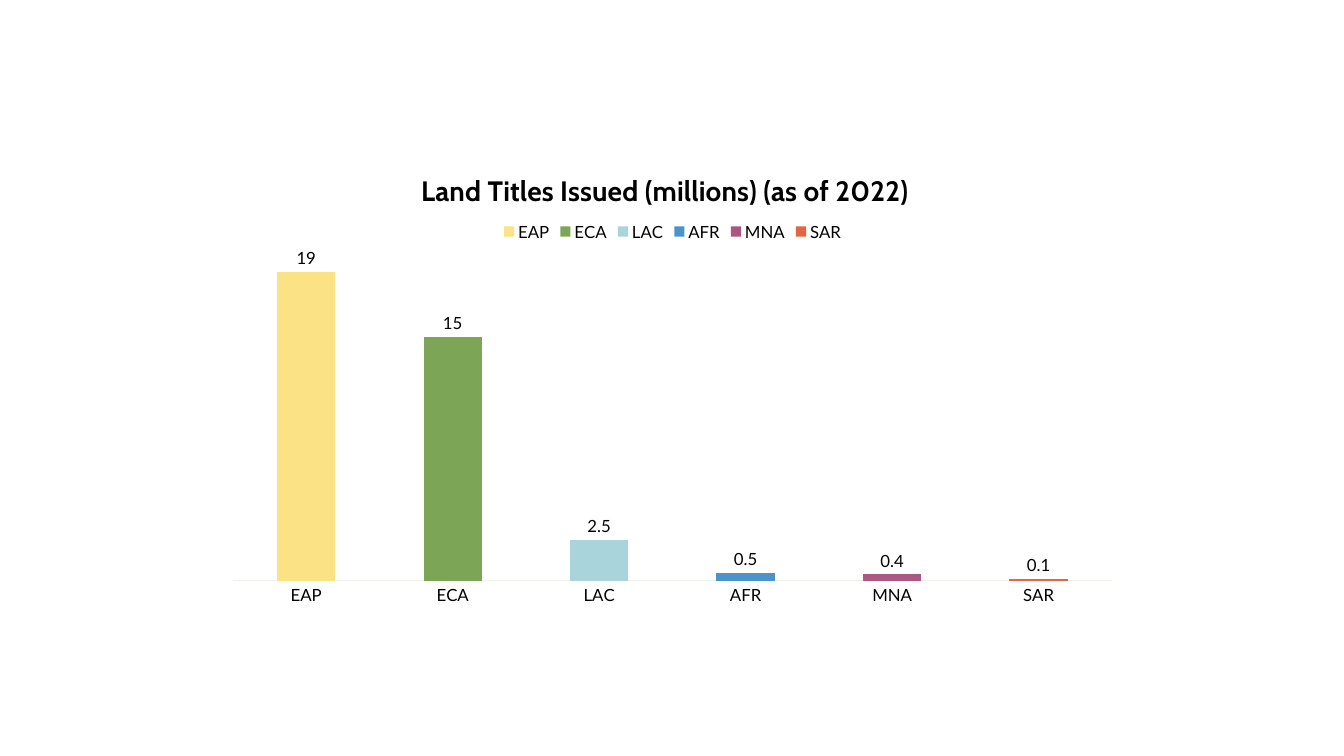
from lxml import etree
from pptx import Presentation
from pptx.chart.data import CategoryChartData as Data
from pptx.dml.color import RGBColor as RGB
from pptx.enum.chart import (XL_CHART_TYPE as Kind, XL_LABEL_POSITION as Spot,
                             XL_LEGEND_POSITION as Side, XL_TICK_MARK as Tick)
from pptx.oxml.ns import qn
from pptx.util import Inches, Pt


def style(font, size, name="Lato", bold=False):
    font.size, font.name, font.bold = Pt(size), name, bold
    font.color.rgb = RGB.from_string("000000")


def place(part, index, **sizes):
    """Give a chart part a manual layout, in fractions of the chart."""
    for old in part.findall(qn("c:layout")):
        part.remove(old)
    layout = etree.Element(qn("c:layout"))
    part.insert(index, layout)
    manual = etree.SubElement(layout, qn("c:manualLayout"))
    if "target" in sizes:
        etree.SubElement(manual, qn("c:layoutTarget"), val=sizes.pop("target"))
    for mode in ("xMode", "yMode"):
        etree.SubElement(manual, qn("c:" + mode), val="edge")
    for key, size in sizes.items():
        etree.SubElement(manual, qn("c:" + key), val=str(size))


regions = [("EAP", 19, "FBE284"), ("ECA", 15, "7CA655"), ("LAC", 2.5, "A9D4DB"),
           ("AFR", 0.5, "4B94CB"), ("MNA", 0.4, "AA5881"), ("SAR", 0.1, "E06742")]
names, values, colors = zip(*regions)

prs = Presentation()
prs.slide_width, prs.slide_height = Inches(13.33), Inches(7.5)
slide = prs.slides.add_slide(prs.slide_layouts[6])

data = Data()
data.categories = names
data.add_series("Land Titles Issued (millions)", values)
chart = slide.shapes.add_chart(Kind.COLUMN_CLUSTERED, Inches(2.13), Inches(1.41),
                               Inches(9.08), Inches(4.68), data).chart
style(chart.font, 10)

# Title and legend
chart.has_title = True
title = chart.chart_title
run = title.text_frame.paragraphs[0].add_run()
run.text = "Land Titles Issued (millions) (as of 2022)"
style(run.font, 20, "Cabin", True)
title.include_in_layout = False
place(title._element, 1, x=0.22, y=0.05)

chart.has_legend = True
legend = chart.legend
legend.position = Side.TOP
legend.include_in_layout = False
style(legend.font, 12)
place(legend._element, 1, x=0.31, y=0.16)

# Axes
cat = chart.category_axis
cat.major_tick_mark = cat.minor_tick_mark = Tick.NONE
cat.format.line.color.rgb = RGB.from_string("EBF2E5")
cat.format.line.width = Pt(0.75)
style(cat.tick_labels.font, 12)
val = chart.value_axis
val.visible = val.has_major_gridlines = False
val.minimum_scale, val.maximum_scale = 0, 20

# Columns
plot = chart.plots[0]
plot.gap_width, plot.overlap = 151, -25
plot.vary_by_categories = True
place(chart._chartSpace.chart.plotArea, 0, target="inner",
      x=0.02, y=0.24, w=0.96, h=0.69)
bars = plot.series[0]
bars.format.fill.solid()
bars.format.fill.fore_color.rgb = RGB.from_string("7CA655")
for i, color in enumerate(colors):
    fill = bars.points[i].format.fill
    fill.solid()
    fill.fore_color.rgb = RGB.from_string(color)
labels = bars.data_labels
labels.show_value = True
labels.position = Spot.OUTSIDE_END
style(labels.font, 12)

prs.save("out.pptx")
